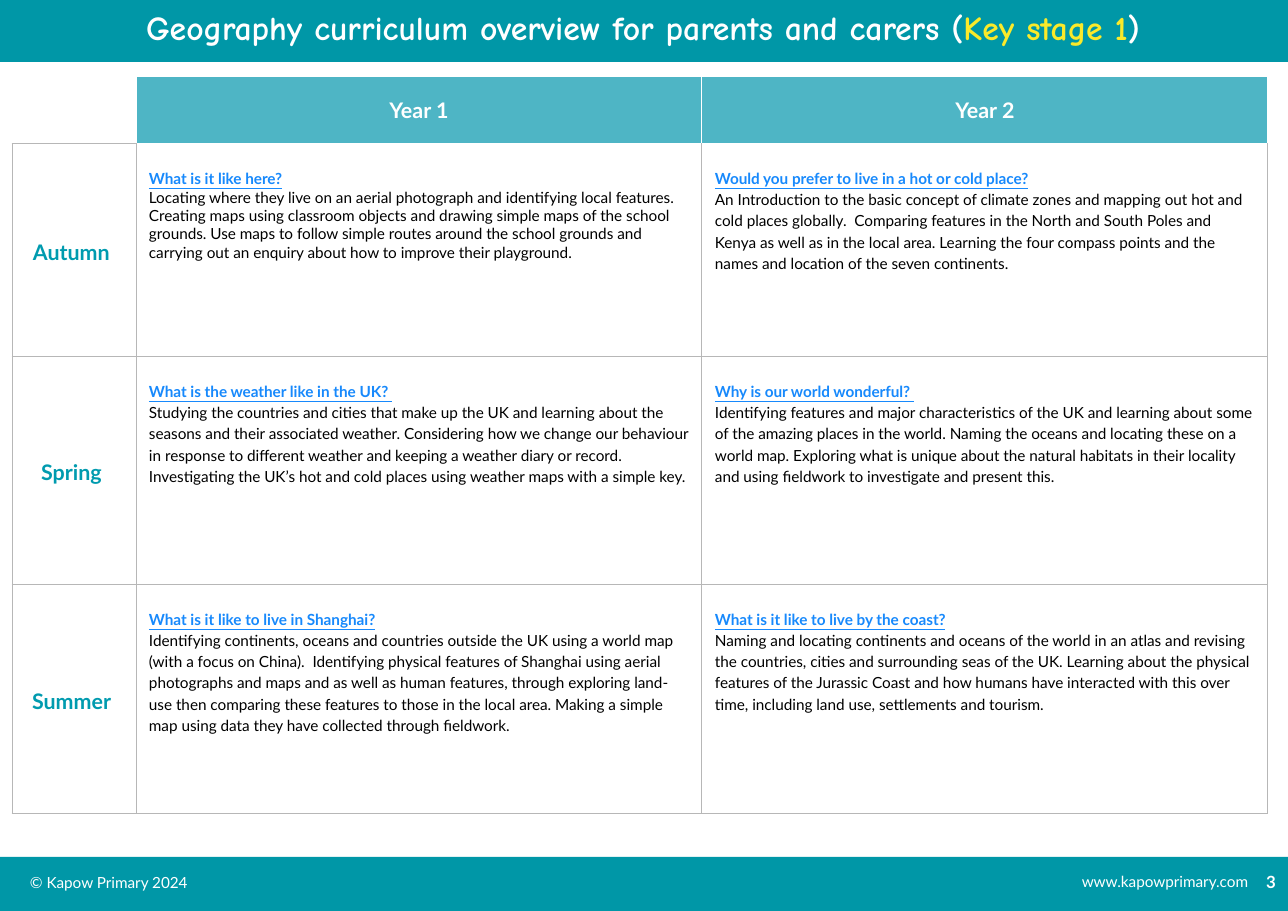
import pptx
import pptx.util
import pptx.dml.color
import pptx.enum.shapes
import pptx.enum.text
import pptx.oxml
import pptx.oxml.ns

COLORS = {"teal": "0097A7", "head": "4EB5C5", "term": "009BAF", "link": "1789FC",
          "key": "FAEA2A", "white": "FFFFFF", "black": "000000", "grid": "B7B7B7"}
TITLE = [("Geography curriculum overview for parents and carers (", "white"),
         ("Key stage 1", "key"), (")", "white")]
YEARS = ["Year 1", "Year 2"]
# Each term holds one (heading, text, line spacing) for each year
TERMS = {
    "Autumn ": [
        ("What is it like here?",
         "Locating where they live on an aerial photograph and identifying local features.  "
         "Creating maps using classroom objects and drawing simple maps of the school grounds. "
         "Use maps to follow simple routes around the school grounds and carrying out an enquiry "
         "about how to improve their playground.", 1.0),
        ("Would you prefer to live in a hot or cold place?",
         "An Introduction to the basic concept of climate zones and mapping out hot and cold "
         "places globally.  Comparing features in the North and South Poles and Kenya as well as "
         "in the local area. Learning the four compass points and the names and location of the "
         "seven continents.", 1.15)],
    "Spring ": [
        ("What is the weather like in the UK? ",
         "Studying the countries and cities that make up the UK and learning about the seasons "
         "and their associated weather. Considering how we change our behaviour in response to "
         "different weather and keeping a weather diary or record. Investigating the UK’s hot "
         "and cold places using weather maps with a simple key.", 1.15),
        ("Why is our world wonderful? ",
         "Identifying features and major characteristics of the UK and learning about some of "
         "the amazing places in the world. Naming the oceans and locating these on a world map. "
         "Exploring what is unique about the natural habitats in their locality and using "
         "fieldwork to investigate and present this.", 1.15)],
    "Summer ": [
        ("What is it like to live in Shanghai?",
         "Identifying continents, oceans and countries outside the UK using a world map (with a "
         "focus on China).  Identifying physical features of Shanghai using aerial photographs "
         "and maps and as well as human features, through exploring land-use then comparing these "
         "features to those in the local area. Making a simple map using data they have collected "
         "through fieldwork.", 1.15),
        ("What is it like to live by the coast?",
         "Naming and locating continents and oceans of the world in an atlas and revising the "
         "countries, cities and surrounding seas of the UK. Learning about the physical features "
         "of the Jurassic Coast and how humans have interacted with this over time, including "
         "land use, settlements and tourism.", 1.15)],
}
WIDE, HIGH = 1288, 911
BANDS = [(0, 0, WIDE, 62), (0, 857, WIDE, 54)]
COLS = [124, 566, 566]
ROWS = [59, 213, 228, 229]
# Box, inset, alignment, line spacing, runs, font
NOTES = [
    ((-1, -3, WIDE, 65), 14, "CENTER", 0.9, TITLE, {"name": "Comic Neue", "size": 22, "bold": True}),
    ((19, 864, 217, 41), 11, "LEFT", 1.0, [("© Kapow Primary 2024", "white")], {"size": 10}),
    ((1042, 863, 217, 41), 11, "RIGHT", 1.0, [("www.kapowprimary.com", "white")], {"size": 10}),
    ((1211, 862, 77, 49), 12, "RIGHT", 1.0, [("3", "white")], {"size": 11, "bold": True}),
]
LABEL = {"size": 14, "bold": True}
LINK = {"size": 10, "bold": True, "underline": True}
BODY = {"size": 10, "bold": False}


def px(n):
    return round(n * 914400 / 110.2)


def rgb(name):
    return pptx.dml.color.RGBColor.from_string(COLORS[name])


def write(para, runs, look, align="LEFT", gap=1.0):
    para.alignment = getattr(pptx.enum.text.PP_ALIGN, align)
    para.line_spacing = gap
    for text, color in runs:
        run = para.add_run()
        run.text = text
        for key, val in {"name": "Lato", **look}.items():
            setattr(run.font, key, pptx.util.Pt(val) if key == "size" else val)
        run.font.color.rgb = rgb(color)


def inset(part, wide, high):
    for side, size in zip(("left", "right", "top", "bottom"), (wide, wide, high, high)):
        setattr(part, "margin_" + side, px(size))


def edge(cell, tones):
    """Draw the left, right, top and bottom borders; None leaves one out."""
    props = cell._tc.get_or_add_tcPr()
    for i, (side, tone) in enumerate(zip("LRTB", tones)):
        paint = (f'<a:solidFill><a:srgbClr val="{COLORS[tone]}"/></a:solidFill>'
                 if tone else "<a:noFill/>")
        props.insert(i, pptx.oxml.parse_xml(
            f'<a:ln{side} {pptx.oxml.ns.nsdecls("a")} w="9525">{paint}</a:ln{side}>'))


def style(cell, fill, tones, anchor="MIDDLE"):
    inset(cell, 13, 17)
    cell.vertical_anchor = getattr(pptx.enum.text.MSO_ANCHOR, anchor)
    if fill:
        cell.fill.solid()
        cell.fill.fore_color.rgb = rgb(fill)
    else:
        cell.fill.background()
    edge(cell, tones)
    return cell.text_frame


def add_grid(slide):
    frame = slide.shapes.add_table(len(ROWS), len(COLS), px(12), px(76),
                                   px(sum(COLS)), px(sum(ROWS)))
    table = frame.table
    table.first_row = table.horz_banding = False
    for col, size in zip(table.columns, COLS):
        col.width = px(size)
    for row, size in zip(table.rows, ROWS):
        row.height = px(size)

    style(table.cell(0, 0), None, (None, "white", None, "grid"))
    for c, year in enumerate(YEARS, 1):
        text = style(table.cell(0, c), "head", ["white"] * 4)
        write(text.paragraphs[0], [(year, "white")], LABEL, "CENTER")
    for r, (term, units) in enumerate(TERMS.items(), 1):
        text = style(table.cell(r, 0), "white", ["grid"] * 4)
        write(text.paragraphs[0], [(term, "term")], LABEL, "CENTER", 1.15)
        top = "white" if r == 1 else "grid"
        for c, (head, body, gap) in enumerate(units, 1):
            text = style(table.cell(r, c), None, ("grid", "grid", top, "grid"), "TOP")
            write(text.paragraphs[0], [(head, "link")], LINK, gap=1.5)
            write(text.add_paragraph(), [(body, "black")], BODY, gap=gap)


def main():
    deck = pptx.Presentation()
    deck.slide_width, deck.slide_height = px(WIDE), px(HIGH)
    slide = deck.slides.add_slide(deck.slide_layouts[6])
    for box in BANDS:
        band = slide.shapes.add_shape(pptx.enum.shapes.MSO_SHAPE.RECTANGLE, *map(px, box))
        band.shadow.inherit = False
        band.fill.solid()
        band.fill.fore_color.rgb = rgb("teal")
        band.line.fill.background()
    add_grid(slide)
    for box, pad, align, gap, runs, look in NOTES:
        text = slide.shapes.add_textbox(*map(px, box)).text_frame
        text.word_wrap = True
        inset(text, pad, pad)
        write(text.paragraphs[0], runs, look, align, gap)
    deck.save("out.pptx")


if __name__ == "__main__":
    main()
